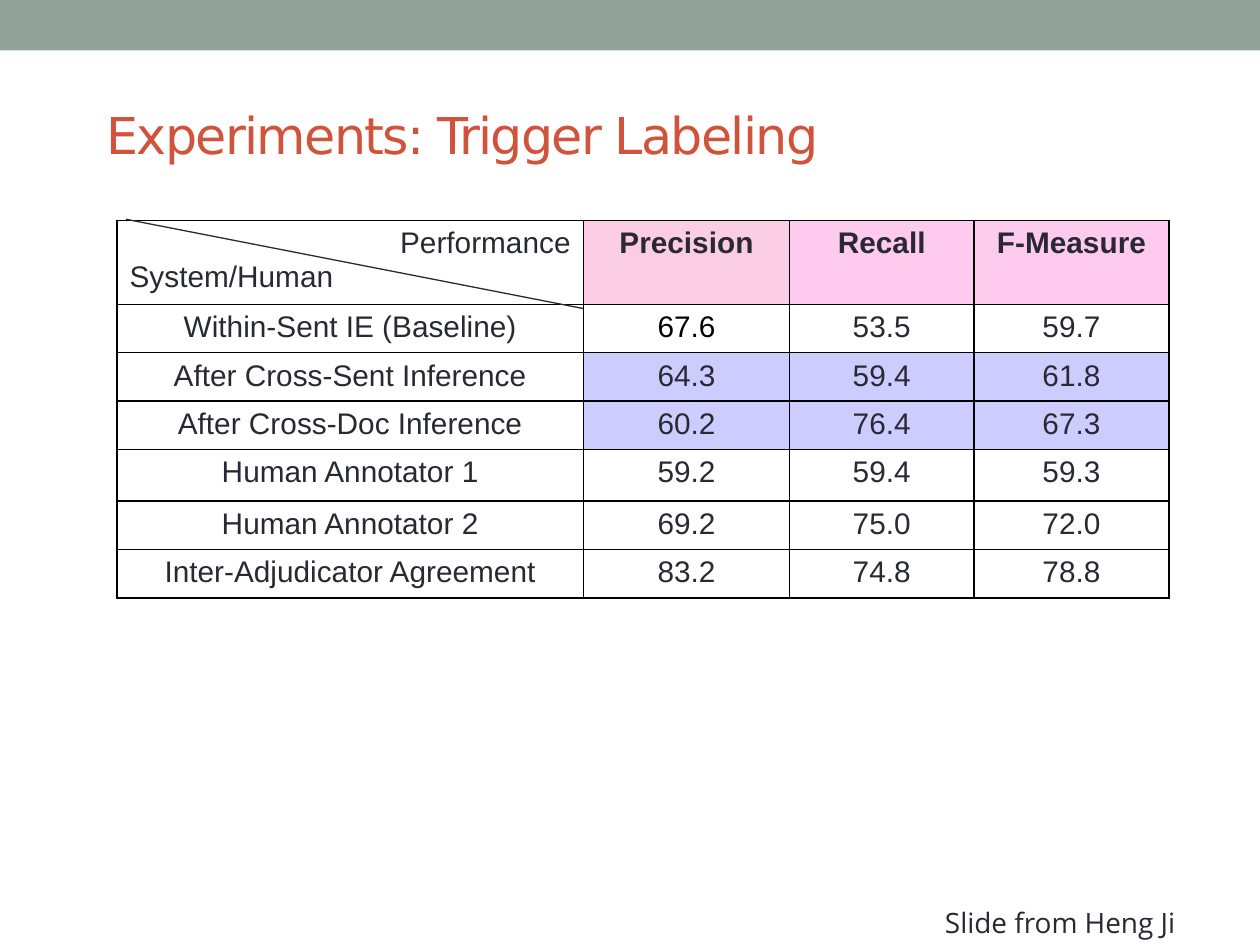
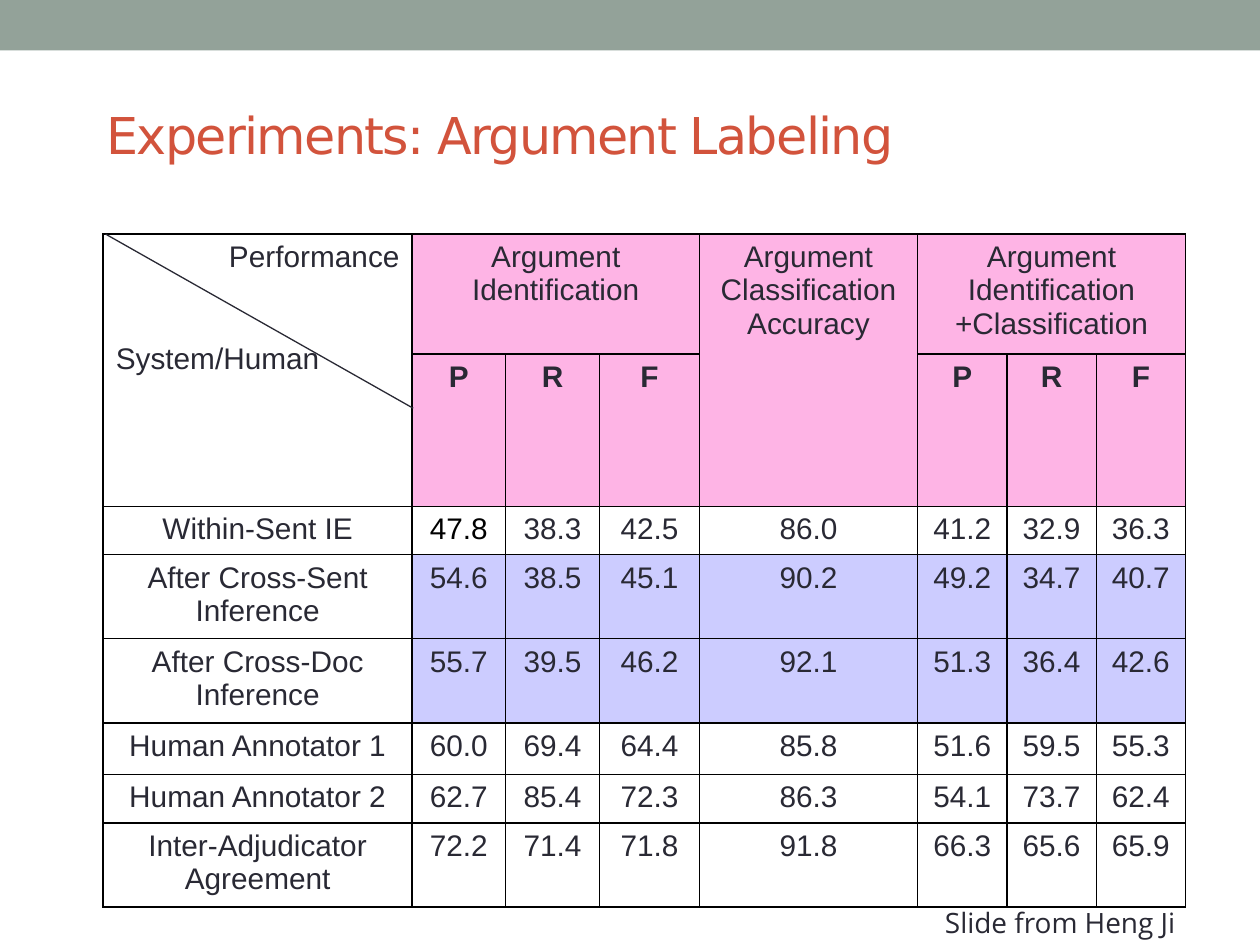
from lxml.etree import SubElement
from pptx import Presentation
from pptx.dml.color import RGBColor as Rgb
from pptx.enum.shapes import MSO_CONNECTOR as Connector, MSO_SHAPE as Shape
from pptx.enum.text import MSO_ANCHOR as Anchor, PP_ALIGN as Align
from pptx.oxml import parse_xml
from pptx.oxml.ns import nsdecls, qn
from pptx.util import Cm, Pt

COLORS = {
    "band": "93A299", "title": "D2533C", "text": "292934", "black": "000000",
    "white": "FFFFFF", "rose": "FBCDE2", "orchid": "FECAED", "pink": "FEB4E5",
    "inference": "0000FF",
}
CORNER = "Performance\nSystem/Human"
LINE, TALL, DOUBLE = 0.94, 1.04, 1.61  # row heights in cm

EXPERIMENTS = [
    {
        "title": "Experiments: Trigger Labeling",
        "left": 2.36, "top": 4.44,
        "columns": [9.4, 4.16, 3.71, 3.94],
        "heights": [DOUBLE, LINE, LINE, LINE, TALL, LINE, LINE],
        "header": [[CORNER, "Precision", "Recall", "F-Measure"]],
        "header_fills": ["white", "rose", "orchid", "orchid"],
        "merges": [],
        "corner_gap": 0,
        "diagonal": (2.54, 4.42, 11.76, 6.22),
        "results": [
            ["Within-Sent IE (Baseline)", "67.6", "53.5", "59.7"],
            ["After Cross-Sent Inference", "64.3", "59.4", "61.8"],
            ["After Cross-Doc Inference", "60.2", "76.4", "67.3"],
            ["Human Annotator 1", "59.2", "59.4", "59.3"],
            ["Human Annotator 2", "69.2", "75.0", "72.0"],
            ["Inter-Adjudicator Agreement", "83.2", "74.8", "78.8"],
        ],
    },
    {
        "title": "Experiments: Argument Labeling",
        "left": 2.08, "top": 4.72,
        "columns": [6.23, 1.88, 1.9, 2.01, 4.4, 1.8, 1.8, 1.8],
        "heights": [2.28, 2.94, LINE, DOUBLE, DOUBLE, TALL, LINE, DOUBLE],
        "header": [
            [CORNER, "Argument Identification", "", "",
             "Argument\nClassification Accuracy",
             "Argument Identification\n+Classification", "", ""],
            ["", "P", "R", "F", "", "P", "R", "F"],
        ],
        "header_fills": ["white"] + ["pink"] * 7,
        "merges": [(0, 0, 1, 0), (0, 1, 0, 3), (0, 4, 1, 4), (0, 5, 0, 7)],
        "corner_gap": 39,
        "diagonal": (2.13, 4.72, 8.33, 8.23),
        "results": [
            ["Within-Sent IE", "47.8", "38.3", "42.5", "86.0", "41.2", "32.9", "36.3"],
            ["After Cross-Sent Inference", "54.6", "38.5", "45.1", "90.2", "49.2", "34.7", "40.7"],
            ["After Cross-Doc Inference", "55.7", "39.5", "46.2", "92.1", "51.3", "36.4", "42.6"],
            ["Human Annotator 1", "60.0", "69.4", "64.4", "85.8", "51.6", "59.5", "55.3"],
            ["Human Annotator 2", "62.7", "85.4", "72.3", "86.3", "54.1", "73.7", "62.4"],
            ["Inter-Adjudicator Agreement", "72.2", "71.4", "71.8", "91.8", "66.3", "65.6", "65.9"],
        ],
    },
]


def style_text(frame, font, size, color, bold=False):
    for paragraph in frame.paragraphs:
        for run in paragraph.runs:
            run.font.name = font
            run.font.size = Pt(size)
            run.font.bold = bold
            run.font.color.rgb = Rgb.from_string(COLORS[color])


def style_cell(cell, fill):
    """Fill the cell and draw a thin black border on its four sides."""
    cell.fill.solid()
    cell.fill.fore_color.rgb = Rgb.from_string(COLORS[fill])
    properties = cell._tc.get_or_add_tcPr()
    if fill == "inference":
        SubElement(properties.find(".//" + qn("a:srgbClr")), qn("a:alpha"), val="20000")
    for index, side in enumerate(["lnL", "lnR", "lnT", "lnB"]):
        properties.insert(index, parse_xml(
            f'<a:{side} {nsdecls("a")} w="12700"><a:solidFill>'
            f'<a:srgbClr val="{COLORS["black"]}"/></a:solidFill></a:{side}>'))


deck = Presentation()
deck.slide_width, deck.slide_height = Cm(25.4), Cm(19.05)

for experiment in EXPERIMENTS:
    slide = deck.slides.add_slide(deck.slide_layouts[6])

    band = slide.shapes.add_shape(Shape.RECTANGLE, 0, 0, deck.slide_width, Cm(1.02))
    band.shadow.inherit = False
    band.fill.solid()
    band.fill.fore_color.rgb = Rgb.from_string(COLORS["band"])
    band.line.fill.background()

    title = slide.shapes.add_textbox(Cm(1.9), Cm(1.12), Cm(21.6), Cm(3.18)).text_frame
    title.word_wrap = True
    title.vertical_anchor = Anchor.MIDDLE
    title.text = experiment["title"]
    style_text(title, "DejaVu Sans", 29, "title")
    title.paragraphs[0].runs[0].font._element.set("spc", "-100")

    header, columns, heights = (experiment[key] for key in ("header", "columns", "heights"))
    rows = header + experiment["results"]
    scores = slide.shapes.add_table(
        len(rows), len(columns), Cm(experiment["left"]), Cm(experiment["top"]),
        Cm(sum(columns)), Cm(sum(heights))).table
    scores.first_row = scores.horz_banding = False
    for column, width in zip(scores.columns, columns):
        column.width = Cm(width)
    for row, height in zip(scores.rows, heights):
        row.height = Cm(height)
    for top, left, bottom, right in experiment["merges"]:
        scores.cell(top, left).merge(scores.cell(bottom, right))

    for r, texts in enumerate(rows):
        in_header = r < len(header)
        for c, text in enumerate(texts):
            cell = scores.cell(r, c)
            fill = "white"
            if in_header:
                fill = experiment["header_fills"][c]
            elif c and "Inference" in texts[0]:
                fill = "inference"
            style_cell(cell, fill)
            if not text:
                continue
            cell.text_frame.text = text
            first_score = r == len(header) and c == 1
            style_text(cell.text_frame, "Arial", 17, "black" if first_score else "text",
                       bold=r == len(header) - 1 and c > 0)
            for paragraph in cell.text_frame.paragraphs:
                paragraph.alignment = Align.CENTER

    performance, system = scores.cell(0, 0).text_frame.paragraphs
    performance.alignment, system.alignment = Align.RIGHT, Align.LEFT
    system.space_before = Pt(experiment["corner_gap"])

    diagonal = slide.shapes.add_connector(
        Connector.STRAIGHT, *[Cm(value) for value in experiment["diagonal"]])
    diagonal.line.color.rgb = Rgb.from_string(COLORS["text"])
    diagonal.line.width = Pt(0.75)
    SubElement(diagonal._element.spPr, qn("a:effectLst"))

    credit = slide.shapes.add_textbox(Cm(18.8), Cm(18.14), Cm(5.49), Cm(0.94)).text_frame
    credit.word_wrap = False
    credit.text = "Slide from Heng Ji"
    style_text(credit, "Open Sans", 16, "text")

deck.save("out.pptx")
